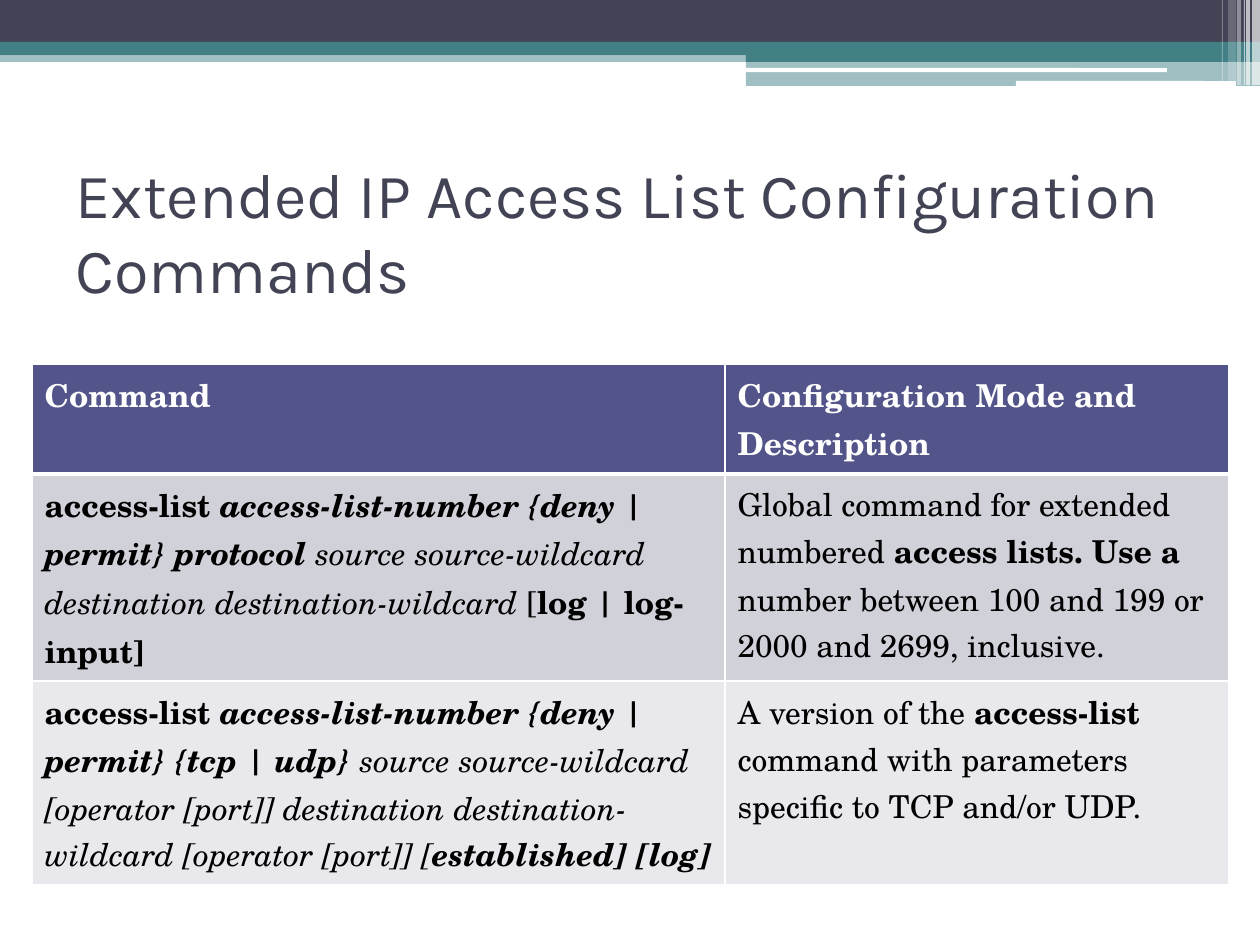
"""Build a slide with a table of extended IP access list commands."""
from lxml.etree import SubElement
from pptx import Presentation
from pptx.dml.color import RGBColor
from pptx.enum.shapes import MSO_SHAPE as Shape
from pptx.enum.text import MSO_ANCHOR as Anchor, MSO_AUTO_SIZE as Fit, PP_ALIGN as Align
from pptx.oxml import parse_xml
from pptx.oxml.ns import nsdecls, qn
from pptx.util import Pt

TITLE = "Extended IP Access List Configuration Commands"
HEADS = ["Command", "Configuration Mode and Description"]
ROWS = [
    (
        [[("access-list ", "b"),
          ("access-list-number {deny | permit} protocol ", "bi"),
          ("source source-wildcard destination destination-wildcard ", "i"),
          ("[", ""), ("log | log-input]", "b")]],
        [[("Global command for extended", "")],
         [("numbered ", ""), ("access lists. Use a", "b")],
         [("number between 100 and 199 or 2000 and 2699, inclusive.", "")]],
    ),
    (
        [[("access-list ", "b"),
          ("access-list-number {deny | permit} {tcp | udp} ", "bi"),
          ("source source-wildcard [operator [port]] destination "
           "destination-wildcard [operator [port]] [", "i"),
          ("established] [log]", "bi")]],
        [[("A version of the ", ""), ("access-list", "b")],
         [("command with parameters", "")],
         [("specific to TCP and/or UDP.", "")]],
    ),
]
COLORS = {"dark": "424456", "teal": "438086", "white": "FFFFFF", "black": "000000",
          "head": "53548A", "odd": "D1D1DA", "even": "E9E9ED"}
BANDS = [
    (0, 50, 1260, 12, "teal", 50),
    (0, 0, 1260, 42, "dark", 100),
    (0, 42, 1260, 13, "teal", 100),
    (746, 49, 514, 13, "teal", 100),
    (746, 61, 514, 25, "teal", 50),
]
PILLS = [(745, 68, 422, 4), (1016, 81, 220, 5)]
STRIPES = [(1252, 8, 85, 65), (1246, 4, 85, 65), (1244, 1, 85, 60),
           (1237, 4, 85, 40), (1228, 8, 81, 20), (1222, 1, 81, 30)]
COLS = [693, 504]
HEIGHTS = [89, 139, 139]
SCALE = 914400 / 126


def px(*sizes):
    return [round(size * SCALE) for size in sizes]


def rgb(name):
    return RGBColor.from_string(COLORS[name])


def draw(slide, kind, box, color, alpha=100):
    shape = slide.shapes.add_shape(kind, *px(*box))
    shape.shadow.inherit = False
    shape.line.fill.background()
    shape.fill.solid()
    shape.fill.fore_color.rgb = rgb(color)
    if alpha < 100:
        tint = shape.fill._xPr.find(".//" + qn("a:srgbClr"))
        SubElement(tint, qn("a:alpha")).set("val", str(alpha * 1000))


def set_font(font, name, size, color):
    font.name, font.size = name, Pt(size)
    font.color.rgb = rgb(color)


def edge(cell, base):
    props = cell._tc.get_or_add_tcPr()
    for spot, side in enumerate("LRTB"):
        width = Pt(base if side == "B" else 1)
        props.insert(spot, parse_xml(
            f'<a:ln{side} {nsdecls("a")} w="{width}"><a:solidFill>'
            f'<a:srgbClr val="{COLORS["white"]}"/></a:solidFill></a:ln{side}>'))


def fill_cell(cell, paras, color, ink, base=1):
    cell.fill.solid()
    cell.fill.fore_color.rgb = rgb(color)
    edge(cell, base)
    frame = cell.text_frame
    for spot, runs in enumerate(paras):
        para = frame.add_paragraph() if spot else frame.paragraphs[0]
        set_font(para.font, "TeX Gyre Schola", 18, ink)
        for text, style in runs:
            run = para.add_run()
            run.text = text
            set_font(run.font, "TeX Gyre Schola", 18, ink)
            run.font.bold = "b" in style
            run.font.italic = "i" in style


def add_title(slide):
    title = slide.shapes.title
    title.left, title.top, title.width, title.height = px(63, 157, 1134, 148)
    frame = title.text_frame
    frame.text = TITLE
    frame.auto_size = Fit.NONE
    frame.vertical_anchor = Anchor.MIDDLE
    para = frame.paragraphs[0]
    para.alignment = Align.LEFT
    set_font(para.font, "Karla", 36, "dark")


def add_grid(slide):
    box = px(32, 364, sum(COLS), sum(HEIGHTS))
    table = slide.shapes.add_table(len(HEIGHTS), len(COLS), *box).table
    for col, width in zip(table.columns, px(*COLS)):
        col.width = width
    for row, height in zip(table.rows, px(*HEIGHTS)):
        row.height = height
    for c, head in enumerate(HEADS):
        fill_cell(table.cell(0, c), [[(head, "b")]], "head", "white", 3)
    for r, row in enumerate(ROWS, 1):
        for c, paras in enumerate(row):
            fill_cell(table.cell(r, c), paras, "odd" if r % 2 else "even", "black")


def main():
    deck = Presentation()
    deck.slide_width, deck.slide_height = px(1260, 945)
    slide = deck.slides.add_slide(deck.slide_layouts[5])
    for *box, color, alpha in BANDS:
        draw(slide, Shape.RECTANGLE, box, color, alpha)
    for box in PILLS:
        draw(slide, Shape.ROUNDED_RECTANGLE, box, "white")
    for left, width, height, alpha in STRIPES:
        draw(slide, Shape.RECTANGLE, (left, 0, width, height), "white", alpha)
    add_title(slide)
    add_grid(slide)
    deck.save("out.pptx")


if __name__ == "__main__":
    main()
